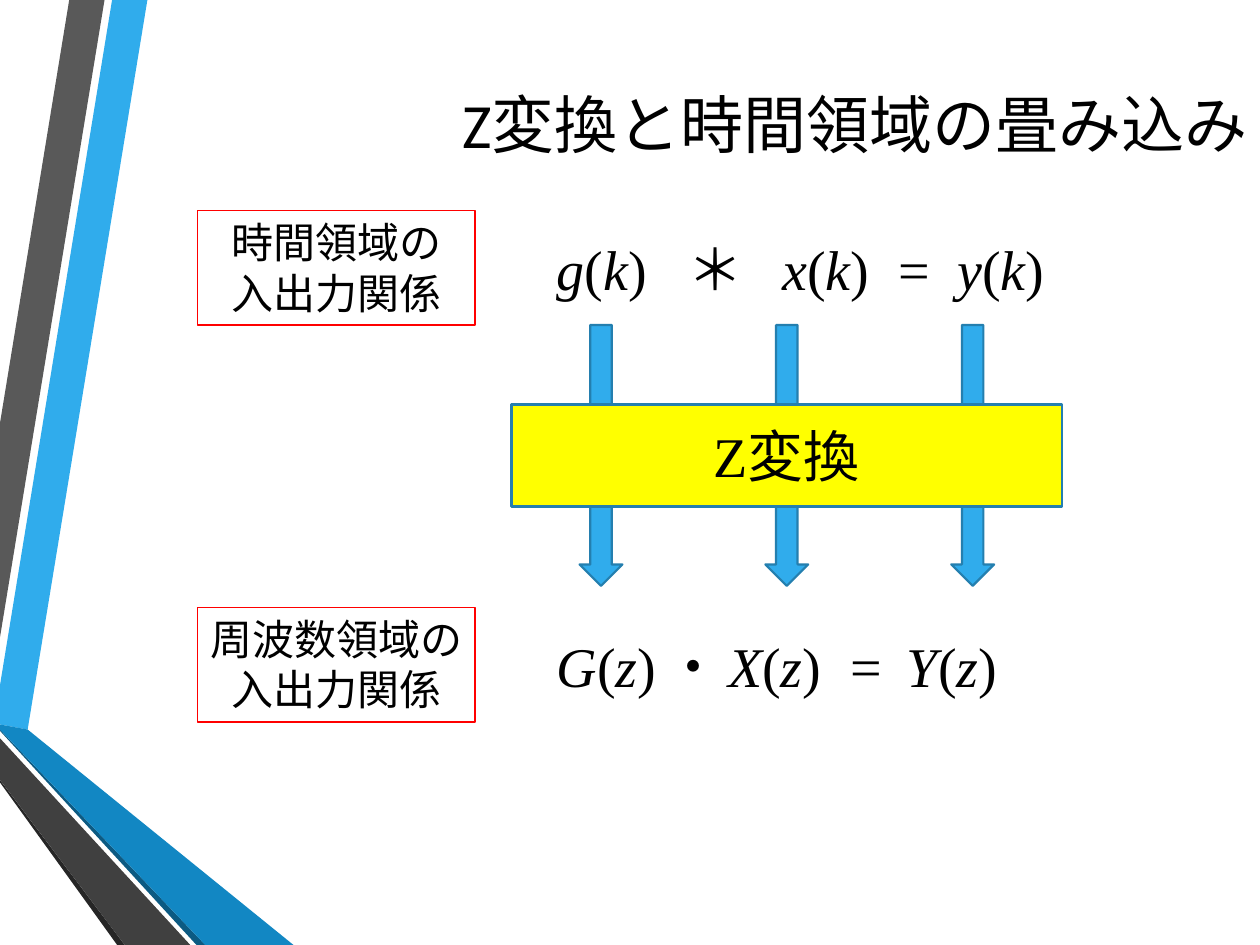
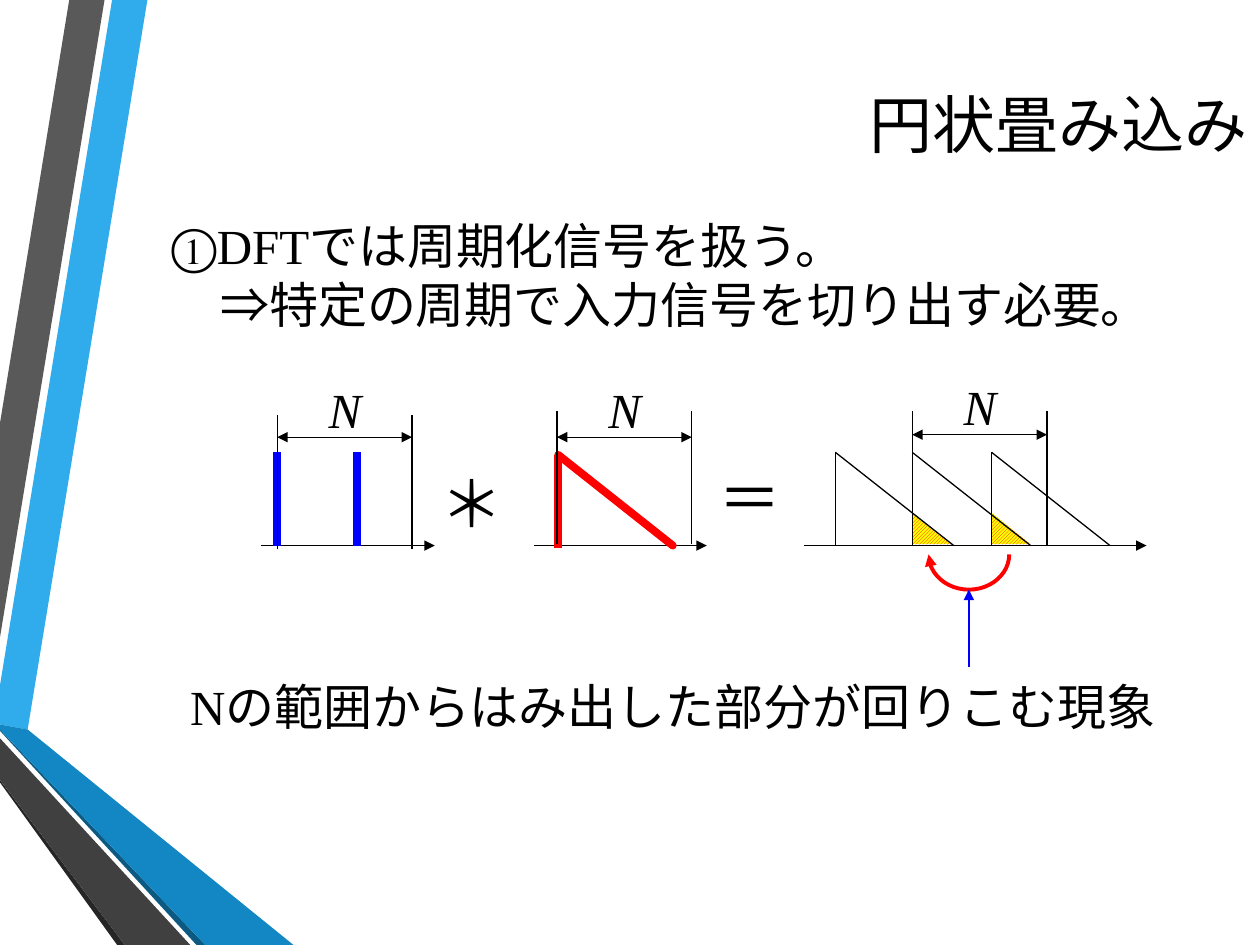
import itertools
import math
from dataclasses import dataclass

import lxml.etree
import pptx
import pptx.dml.color
import pptx.enum.dml
import pptx.enum.shapes
import pptx.enum.text
import pptx.oxml.ns
import pptx.util

Inches = pptx.util.Inches
Pt = pptx.util.Pt
RGB = pptx.dml.color.RGBColor.from_string
qn = pptx.oxml.ns.qn
SHAPE = pptx.enum.shapes.MSO_SHAPE
ALIGN = pptx.enum.text.PP_ALIGN
ANCHOR = pptx.enum.text.MSO_ANCHOR


@dataclass(frozen=True)
class Theme:
    black: str = "000000"
    red: str = "FF0000"
    blue: str = "0000FF"
    yellow: str = "FFFF00"
    sky: str = "30ACEC"
    sky_edge: str = "247FAF"
    ocean: str = "1287C3"
    ocean_shade: str = "0C5A82"
    gray: str = "595959"
    charcoal: str = "404040"
    charcoal_shade: str = "262626"
    title_font: str = "Calibri"
    body_font: str = "Times New Roman"
    title_size: int = 36
    formula_size: int = 32
    body_size: int = 28
    label_size: int = 24
    thin: float = 0.75
    edge: float = 1.25
    medium: float = 2.25
    bold: float = 4.5


theme = Theme()


def write(shape, text, size, font=theme.body_font, align=ALIGN.LEFT, anchor=ANCHOR.TOP):
    """Fill a shape with black text in one style."""
    frame = shape.text_frame
    frame.word_wrap = True
    frame.vertical_anchor = anchor
    frame.text = text
    for paragraph in frame.paragraphs:
        paragraph.alignment = align
        for run in paragraph.runs:
            run.font.size = Pt(size)
            run.font.name = font
            run.font.color.rgb = RGB(theme.black)
    return frame


def draw_line(slide, start, end, color=theme.black, width=theme.thin, ends=()):
    """Draw a straight line; ends lists headEnd and tailEnd arrowheads."""
    line = slide.shapes.add_connector(
        pptx.enum.shapes.MSO_CONNECTOR.STRAIGHT, *map(Inches, start + end))
    line.line.color.rgb = RGB(color)
    line.line.width = Pt(width)
    for tip in ends:
        lxml.etree.SubElement(line.line._get_or_add_ln(), qn("a:" + tip), type="triangle")
    lxml.etree.SubElement(line._element.spPr, qn("a:effectLst"))
    return line


deck = pptx.Presentation()
deck.slide_width = Inches(10)
deck.slide_height = Inches(7.5)

# Shared ribbons and titles
ribbons = [
    (theme.sky, [(0, 5.44), (0, 5.75), (0.22, 5.79), (1.17, 0), (0.89, 0)]),
    (theme.gray, [(0.83, 0), (0.55, 0), (0, 3.36), (0, 5.06)]),
    (theme.charcoal_shade, [(0, 6.19), (0, 6.21), (0.93, 7.5), (0.99, 7.5)]),
    (theme.ocean_shade, [(0, 5.79), (0, 5.8), (1.56, 7.5), (1.63, 7.5)]),
    (theme.ocean, [(0, 5.79), (1.63, 7.5), (2.33, 7.5), (0.22, 5.79), (0, 5.75)]),
    (theme.charcoal, [(0, 6.19), (0.99, 7.5), (1.51, 7.5), (0, 5.86)]),
]
slides = []
for heading in ("Z変換と時間領域の畳み込み", "円状畳み込み"):
    slide = deck.slides.add_slide(deck.slide_layouts[6])
    slides.append(slide)
    for color, corners in ribbons:
        first, *others = [(Inches(x), Inches(y)) for x, y in corners]
        outline = slide.shapes.build_freeform(*first)
        outline.add_line_segments(others, close=True)
        ribbon = outline.convert_to_shape()
        ribbon.shadow.inherit = False
        ribbon.fill.solid()
        ribbon.fill.fore_color.rgb = RGB(color)
        ribbon.line.fill.background()
    title = slide.shapes.add_textbox(Inches(1.57), 0, Inches(8.43), Inches(1.33))
    write(title, heading, theme.title_size, theme.title_font, ALIGN.RIGHT, ANCHOR.BOTTOM)
transform_slide, circular_slide = slides

# Slide 1: domain labels and their formulas, aligned on tab stops
domains = [
    (1.67, "時間領域の\n入出力関係", "g(k)\t＊\tx(k)\t=\ty(k)", (1.04, 1.79, 2.71, 3.18)),
    (4.82, "周波数領域の\n入出力関係", "G(z)\t・\tX(z)\t=\tY(z)", (0.86, 1.36, 2.33, 2.78)),
]
for top, caption, formula, stops in domains:
    label = transform_slide.shapes.add_shape(
        SHAPE.RECTANGLE, Inches(1.57), Inches(top), Inches(2.2), Inches(0.91))
    label.shadow.inherit = False
    label.fill.background()
    label.line.color.rgb = RGB(theme.red)
    label.line.width = Pt(theme.thin)
    write(label, caption, theme.label_size, align=ALIGN.CENTER)

    equation = transform_slide.shapes.add_textbox(
        Inches(4.32), Inches(top + 0.14), Inches(4.87), Inches(0.64))
    terms = write(equation, "", theme.formula_size).paragraphs[0]
    for is_variable, letters in itertools.groupby(formula, str.isalpha):
        term = terms.add_run()
        term.text = "".join(letters)
        term.font.size = Pt(theme.formula_size)
        term.font.name = theme.body_font
        term.font.italic = is_variable
        term.font.color.rgb = RGB(theme.black)
    tabs = lxml.etree.SubElement(terms._p.get_or_add_pPr(), qn("a:tabLst"))
    for stop in stops:
        lxml.etree.SubElement(tabs, qn("a:tab"), pos=str(Inches(stop)), algn="l")

# Slide 1: three arrows passing behind the transform block
flow = [(SHAPE.DOWN_ARROW, 4.6 + 1.475 * i, 2.58, 0.34, 2.07, theme.sky) for i in range(3)]
flow.append((SHAPE.RECTANGLE, 4.06, 3.21, 4.37, 0.81, theme.yellow))
for kind, left, top, width, height, color in flow:
    block = transform_slide.shapes.add_shape(
        kind, Inches(left), Inches(top), Inches(width), Inches(height))
    block.shadow.inherit = False
    block.fill.solid()
    block.fill.fore_color.rgb = RGB(color)
    block.line.color.rgb = RGB(theme.sky_edge)
    block.line.width = Pt(theme.edge)
write(block, "Z変換", theme.formula_size, align=ALIGN.CENTER, anchor=ANCHOR.MIDDLE)

# Slide 2: statement and conclusion
statement = circular_slide.shapes.add_textbox(
    Inches(1.26), Inches(1.66), Inches(8.47), Inches(1.1))
consequence = write(
    statement, "①DFTでは周期化信号を扱う。\n⇒特定の周期で入力信号を切り出す必要。",
    theme.body_size).paragraphs[1]
consequence._p.get_or_add_pPr().set("marL", str(Inches(0.39)))
conclusion = circular_slide.shapes.add_textbox(
    Inches(1.41), Inches(5.32), Inches(8.15), Inches(0.57))
write(conclusion, "Nの範囲からはみ出した部分が回りこむ現象", theme.body_size)

# Slide 2: overflow parts of the convolved signal
base, peak = 4.33, 3.59
for left in (7.24, 7.87):
    overflow = circular_slide.shapes.add_shape(
        SHAPE.RIGHT_TRIANGLE, Inches(left), Inches(4.07), Inches(0.31), Inches(0.25))
    overflow.shadow.inherit = False
    overflow.fill.patterned()
    overflow.fill.pattern = pptx.enum.dml.MSO_PATTERN.DARK_UPWARD_DIAGONAL
    overflow.fill.fore_color.rgb = RGB(theme.red)
    overflow.fill.back_color.rgb = RGB(theme.yellow)
    overflow.line.fill.background()

# Slide 2: time axes, pulses, ramp and the shifted ramps
for start, end in ((2.07, 3.45), (4.24, 5.61), (6.38, 9.1)):
    draw_line(circular_slide, (start, base), (end, base), ends=["tailEnd"])
for x in (2.2, 2.83):
    draw_line(circular_slide, (x, base), (x, peak), theme.blue, theme.bold)
draw_line(circular_slide, (4.43, 4.35), (4.43, 3.61), theme.red, theme.bold)
slope = draw_line(circular_slide, (5.34, base), (4.43, 3.61), theme.red, theme.bold)
slope.line._get_or_add_ln().set("cap", "rnd")
for x in (6.63, 7.24, 7.87):
    draw_line(circular_slide, (x, base), (x, peak))
    draw_line(circular_slide, (x + 0.94, base), (x, peak))

# Slide 2: operators between the signals
for left, top, operator in ((3.4, 3.64, "＊"), (5.6, 3.59, "＝")):
    sign = circular_slide.shapes.add_textbox(
        Inches(left), Inches(top), Inches(0.62), Inches(0.71))
    write(sign, operator, theme.title_size, theme.title_font)

# Slide 2: period N over each signal
period = 1.07
for left, top, bottom, height in (
        (2.2, 3.29, 4.36, 3.47), (4.42, 3.26, 4.32, 3.47), (7.24, 3.26, 4.33, 3.45)):
    right = left + period
    for x in (left, right):
        draw_line(circular_slide, (x, bottom), (x, top))
    draw_line(circular_slide, (right, height), (left, height), ends=["headEnd", "tailEnd"])
    length = circular_slide.shapes.add_textbox(
        Inches(left + 0.31), Inches(height - 0.51), Inches(0.61), Inches(0.57))
    write(length, "N", theme.body_size).paragraphs[0].runs[0].font.italic = True

# Slide 2: wrap-around arc and its pointer
center, rim, radius, depth = 7.69, 4.4, 0.32, 0.28
angles = [math.pi * step / 24 for step in range(25)]
first, *others = [
    (Inches(center + radius * math.cos(a)), Inches(rim + depth * math.sin(a))) for a in angles]
outline = circular_slide.shapes.build_freeform(*first)
outline.add_line_segments(others, close=False)
wrap_around = outline.convert_to_shape()
wrap_around.shadow.inherit = False
wrap_around.fill.background()
wrap_around.line.color.rgb = RGB(theme.red)
wrap_around.line.width = Pt(theme.medium)
lxml.etree.SubElement(wrap_around.line._get_or_add_ln(), qn("a:tailEnd"), type="triangle")
draw_line(circular_slide, (center, 5.29), (center, rim + depth), theme.blue, ends=["tailEnd"])

deck.save("out.pptx")
